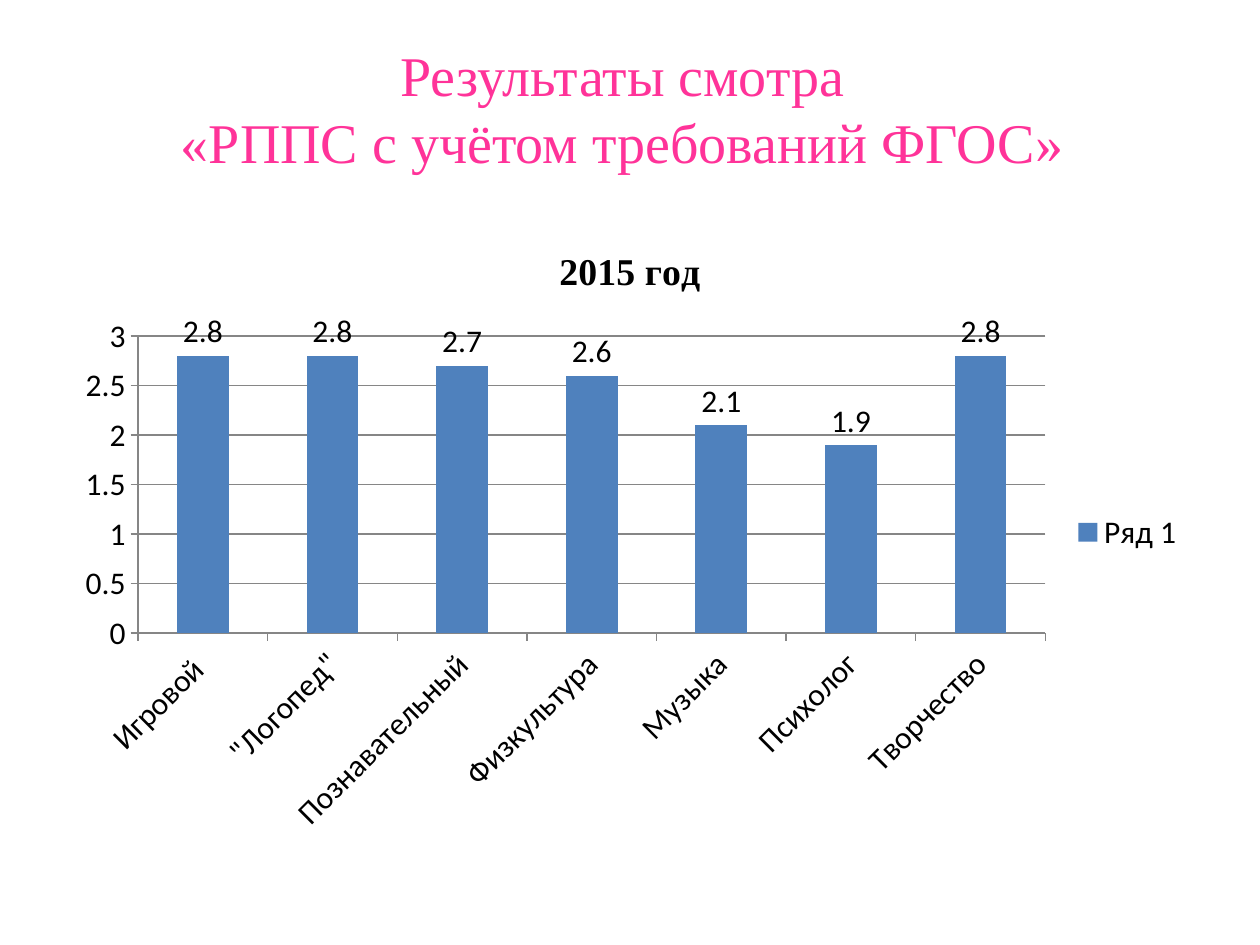
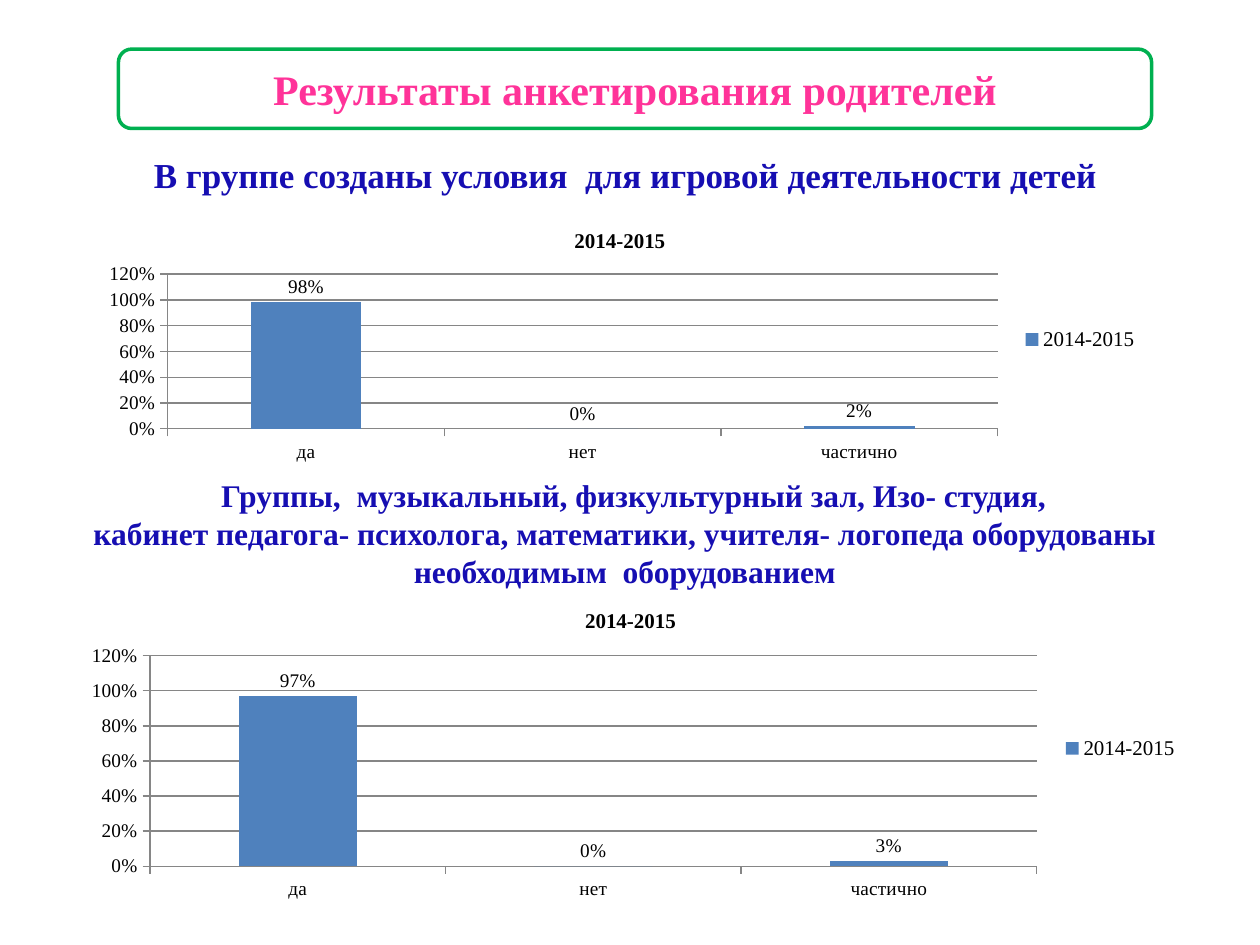
from pptx import Presentation
from pptx.chart.data import CategoryChartData
from pptx.dml.color import RGBColor
from pptx.enum.chart import XL_CHART_TYPE, XL_LABEL_POSITION, XL_LEGEND_POSITION, XL_TICK_MARK
from pptx.enum.shapes import MSO_SHAPE
from pptx.enum.text import MSO_ANCHOR, PP_ALIGN
from pptx.util import Inches, Pt

PINK = RGBColor(0xFF, 0x33, 0x99)
NAVY = RGBColor(0x16, 0x0E, 0xB2)
GREEN = RGBColor(0x00, 0xB0, 0x50)
BLUE = RGBColor(0x4F, 0x81, 0xBD)
GRAY = RGBColor(0x86, 0x86, 0x86)
WHITE = RGBColor(0xFF, 0xFF, 0xFF)
BLACK = RGBColor(0, 0, 0)
SERIF = "Times New Roman"
SANS = "Calibri"

ANSWERS = ["да", "нет", "частично"]
SURVEY_YEAR = "2014-2015"
SURVEY_FORMAT = {"body_size": 11, "legend_size": 12, "title_size": 12, "face": SERIF,
                 "top": 1.2, "step": 0.2, "number_format": "0%"}
REVIEW_FORMAT = {"body_size": 18, "legend_size": 18, "title_size": 21.6, "face": SANS,
                 "top": 3, "step": 0.5, "number_format": "General"}


def apply_format(target, values):
    for name, value in values.items():
        setattr(target, name, value)


def style_font(font, size, face, color, bold=False):
    apply_format(font, {"size": Pt(size), "name": face, "bold": bold})
    font.color.rgb = color


def write_lines(frame, lines, size, color, bold, anchor=MSO_ANCHOR.MIDDLE):
    apply_format(frame, {"word_wrap": True, "vertical_anchor": anchor})
    for index, line in enumerate(lines):
        paragraph = frame.paragraphs[0] if index == 0 else frame.add_paragraph()
        apply_format(paragraph, {"text": line, "alignment": PP_ALIGN.CENTER})
        for run in paragraph.runs:
            style_font(run.font, size, SERIF, color, bold)


def add_caption(slide, box, lines, size, color, bold=True, anchor=MSO_ANCHOR.MIDDLE):
    caption = slide.shapes.add_textbox(*map(Inches, box))
    write_lines(caption.text_frame, lines, size, color, bold, anchor)
    return caption


def add_banner(slide, box, heading):
    banner = slide.shapes.add_shape(MSO_SHAPE.FLOWCHART_ALTERNATE_PROCESS, *map(Inches, box))
    banner.shadow.inherit = False
    banner.fill.solid()
    banner.fill.fore_color.rgb = WHITE
    banner.line.color.rgb = GREEN
    banner.line.width = Pt(2)
    write_lines(banner.text_frame, [heading], 24, PINK, True)


def style_axes(chart, look):
    for axis in (chart.category_axis, chart.value_axis):
        apply_format(axis, {"major_tick_mark": XL_TICK_MARK.OUTSIDE,
                            "minor_tick_mark": XL_TICK_MARK.NONE})
        style_font(axis.tick_labels.font, look["body_size"], look["face"], BLACK)
    scale = chart.value_axis
    apply_format(scale, {"minimum_scale": 0, "maximum_scale": look["top"],
                         "major_unit": look["step"], "has_major_gridlines": True})
    apply_format(scale.tick_labels, {"number_format": look["number_format"],
                                     "number_format_is_linked": False})
    for line in (chart.category_axis.format.line, scale.format.line,
                 scale.major_gridlines.format.line):
        line.color.rgb = GRAY
        line.width = Pt(0.75)


def add_score_chart(slide, box, title, series_name, categories, scores, look):
    data = CategoryChartData(number_format=look["number_format"])
    data.categories = categories
    data.add_series(series_name, scores)
    chart = slide.shapes.add_chart(
        XL_CHART_TYPE.COLUMN_CLUSTERED, *map(Inches, box), data).chart
    style_font(chart.font, look["body_size"], look["face"], BLACK)
    apply_format(chart, {"has_title": True, "has_legend": True})
    chart.chart_title.text_frame.text = title
    heading = chart.chart_title.text_frame.paragraphs[0].runs[0]
    style_font(heading.font, look["title_size"], SERIF, BLACK, True)
    apply_format(chart.legend, {"position": XL_LEGEND_POSITION.RIGHT, "include_in_layout": False})
    style_font(chart.legend.font, look["legend_size"], look["face"], BLACK)
    style_axes(chart, look)

    plot = chart.plots[0]
    apply_format(plot, {"gap_width": 150, "vary_by_categories": False, "has_data_labels": True})
    apply_format(plot.data_labels, {"show_value": True, "position": XL_LABEL_POSITION.OUTSIDE_END,
                                    "number_format": look["number_format"],
                                    "number_format_is_linked": False})
    style_font(plot.data_labels.font, look["body_size"], look["face"], BLACK)
    columns = plot.series[0]
    columns.format.fill.solid()
    columns.format.fill.fore_color.rgb = BLUE


def add_survey_chart(slide, box, shares):
    add_score_chart(slide, box, SURVEY_YEAR, SURVEY_YEAR, ANSWERS, shares, SURVEY_FORMAT)


def build_review_slide(slide):
    add_caption(slide, (0.44, 0.3, 9, 1.11),
                ["Результаты смотра\v«РППС с учётом требований ФГОС»"], 32, PINK, False)
    rooms = ["Игровой ", "\"Логопед\"", "Познавательный", "Физкультура",
             "Музыка", "Психолог", "Творчество"]
    add_score_chart(slide, (0.5, 1.75, 9, 4.95), "2015 год", "Ряд 1", rooms,
                    (2.8, 2.8, 2.7, 2.6, 2.1, 1.9, 2.8), REVIEW_FORMAT)


def build_survey_slide(slide):
    add_banner(slide, (0.94, 0.39, 8.2, 0.63), "Результаты анкетирования родителей")
    equipment = add_caption(slide, (-0.04, 3.71, 10, 1.04), [
        "Группы,  музыкальный, физкультурный зал, Изо- студия,",
        "кабинет педагога- психолога, математики, учителя- логопеда оборудованы "
        "необходимым  оборудованием"], 18, NAVY)
    first_line = equipment.text_frame.paragraphs[0]
    first_line._p.get_or_add_pPr().set("marL", str(Inches(0.14)))
    add_survey_chart(slide, (0.55, 4.69, 8.91, 2.5), (0.97, 0, 0.03))
    add_caption(slide, (0.2, 1.17, 9.53, 0.44),
                ["В группе созданы условия  для игровой деятельности детей"],
                20, NAVY, anchor=MSO_ANCHOR.TOP)
    add_survey_chart(slide, (0.7, 1.68, 8.44, 2.03), (0.98, 0, 0.02))


def main():
    deck = Presentation()
    apply_format(deck, {"slide_width": Inches(10), "slide_height": Inches(7.5)})
    blank = deck.slide_layouts[6]
    for build in (build_review_slide, build_survey_slide):
        build(deck.slides.add_slide(blank))
    deck.save("out.pptx")


if __name__ == "__main__":
    main()
